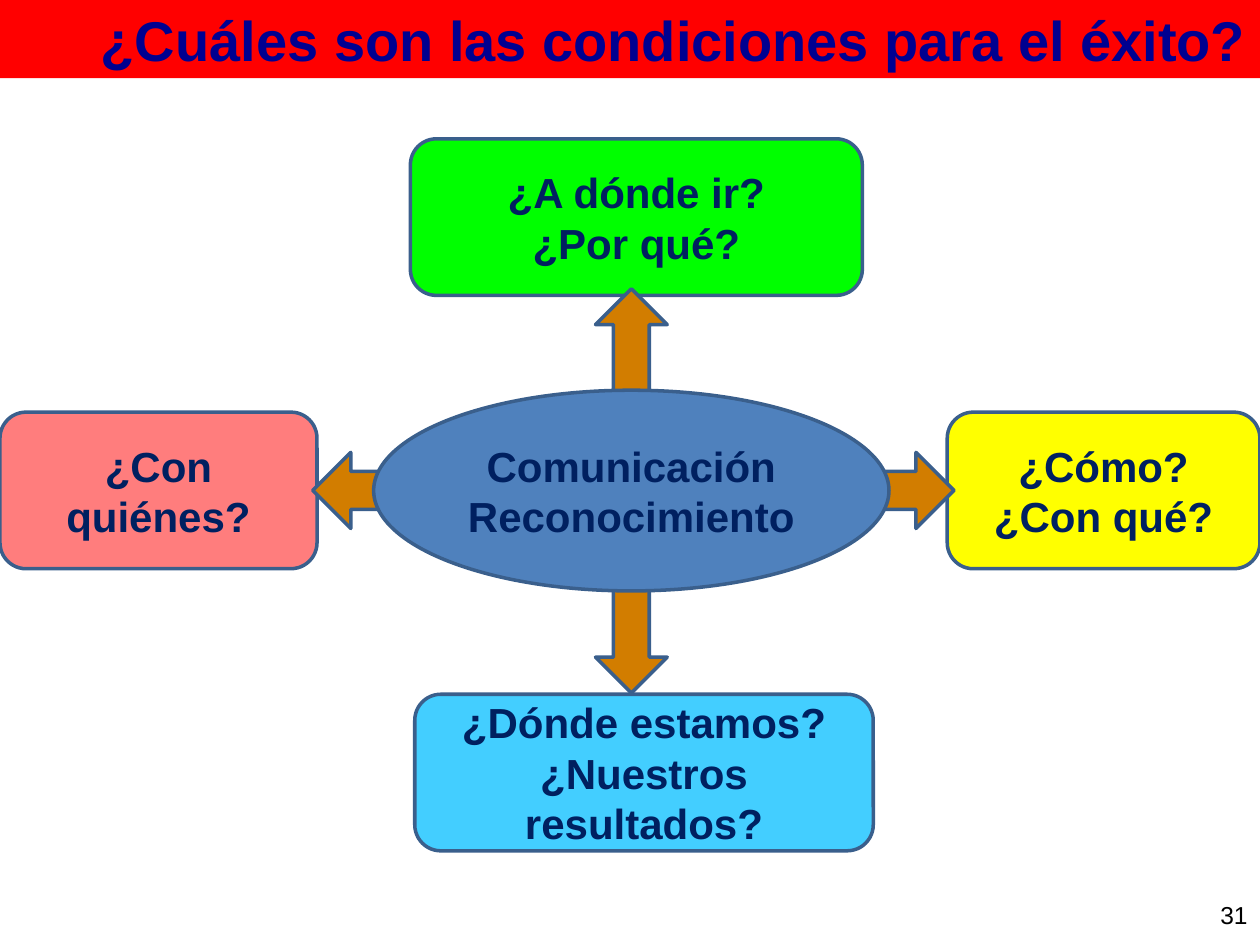
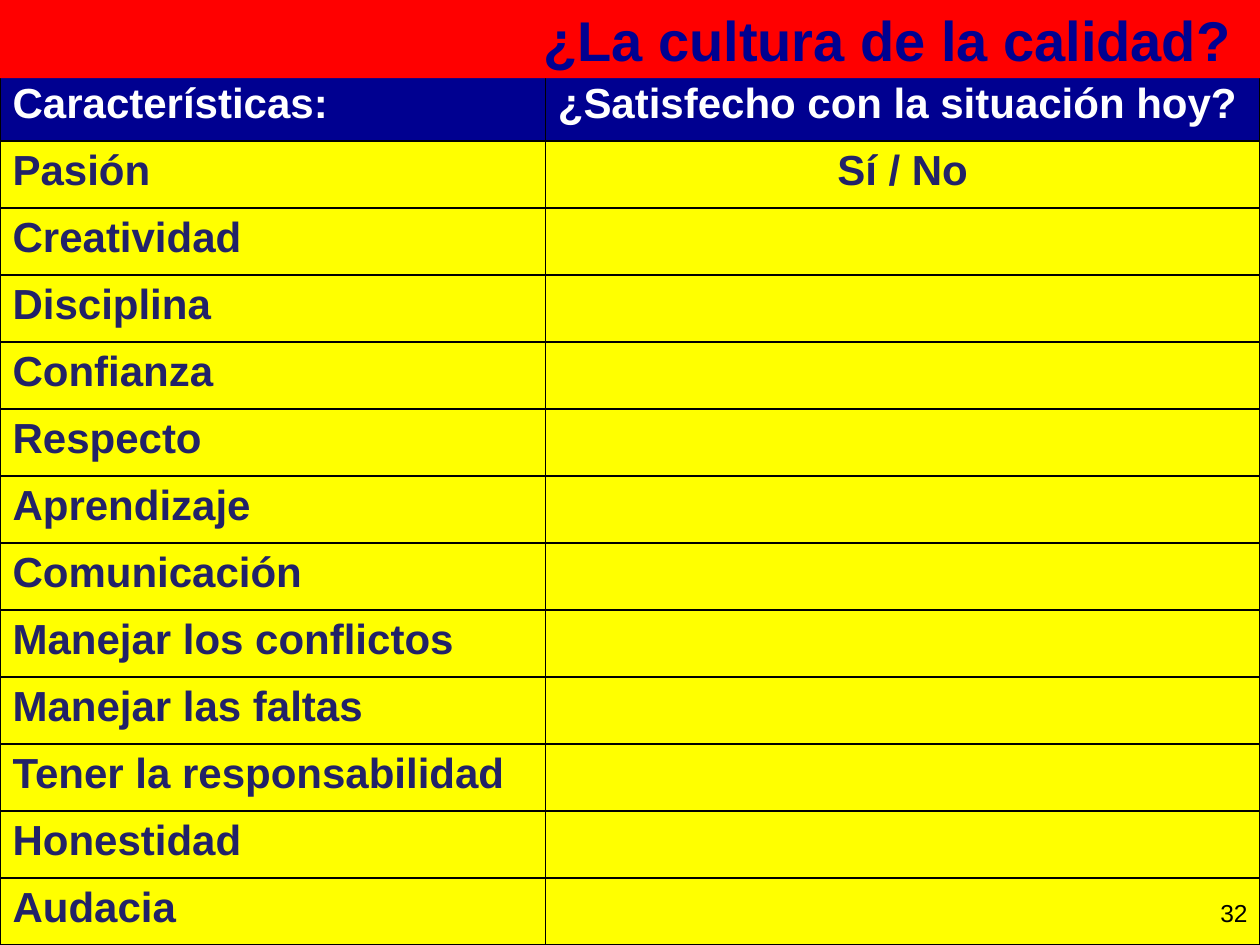
from pptx import Presentation
from pptx.dml.color import RGBColor
from pptx.enum import shapes, text
from pptx.oxml import parse_xml
from pptx.oxml.ns import nsdecls
from pptx.util import Pt

FONT = "Arial"
RED = RGBColor(0xFF, 0x00, 0x00)
DARK_BLUE = RGBColor(0x00, 0x00, 0x90)
NAVY = RGBColor(0x00, 0x20, 0x60)
INDIGO = RGBColor(0x22, 0x22, 0x68)
OUTLINE = RGBColor(0x3A, 0x5F, 0x8C)
BLUE = RGBColor(0x4F, 0x81, 0xBD)
ORANGE = RGBColor(0xD2, 0x7D, 0x00)
GREEN = RGBColor(0x00, 0xFF, 0x00)
SKY = RGBColor(0x43, 0xCE, 0xFF)
YELLOW = RGBColor(0xFF, 0xFF, 0x00)
PINK = RGBColor(0xFF, 0x7D, 0x7D)
BLACK = RGBColor(0x00, 0x00, 0x00)
WHITE = RGBColor(0xFF, 0xFF, 0xFF)

WIDTH, HEIGHT = 720, 540
BAND_HEIGHT = 44.64
BOX_HEIGHT = 89.5
SIDE_TOP = 235.5
LEFT, CENTER, RIGHT = text.PP_ALIGN.LEFT, text.PP_ALIGN.CENTER, text.PP_ALIGN.RIGHT
SHAPE = shapes.MSO_SHAPE

# wording, left, top, width, fill
QUESTIONS = [
    ("¿A dónde ir?\n¿Por qué?", 234.5, 79.3, 258.3, GREEN),
    ("¿Dónde estamos?\n¿Nuestros resultados?", 237, 396.7, 262, SKY),
    ("¿Cómo?\n¿Con qué?", 541.3, SIDE_TOP, 178.7, YELLOW),
    ("¿Con quiénes?", 0, SIDE_TOP, 181.2, PINK),
]
TRAITS = [
    "Pasión", "Creatividad", "Disciplina", "Confianza", "Respecto",
    "Aprendizaje", "Comunicación", "Manejar los conflictos",
    "Manejar las faltas", "Tener la responsabilidad", "Honestidad", "Audacia",
]
TABLE_TOP = 42.4
TRAIT_WIDTH = 311.6


def points(*lengths):
    return [Pt(length) for length in lengths]


def write(frame, wording, size, color, align, bold=True):
    frame.text = wording
    for paragraph in frame.paragraphs:
        paragraph.alignment = align
        for run in paragraph.runs:
            run.font.name = FONT
            run.font.size = Pt(size)
            run.font.bold = bold
            run.font.color.rgb = color


def fill_solid(target, color):
    target.fill.solid()
    target.fill.fore_color.rgb = color


def add_titled_slide(prs, wording):
    slide = prs.slides.add_slide(prs.slide_layouts[5])
    band = slide.shapes.title
    band.left, band.top, band.width, band.height = points(0, 0, WIDTH, BAND_HEIGHT)
    fill_solid(band, RED)
    frame = band.text_frame
    frame.auto_size = text.MSO_AUTO_SIZE.NONE
    frame.vertical_anchor = text.MSO_ANCHOR.MIDDLE
    write(frame, wording, 32, DARK_BLUE, RIGHT)
    return slide


def add_page_number(slide, number, top):
    label = slide.shapes.add_textbox(*points(552.2, top, WIDTH - 552.2, 37.4))
    label.text_frame.word_wrap = True
    label.text_frame.vertical_anchor = text.MSO_ANCHOR.MIDDLE
    write(label.text_frame, number, 14, BLACK, RIGHT, bold=False)


def add_outlined(slide, kind, place, color, wording=""):
    """Add a filled shape with the shared outline and centred wording."""
    shape = slide.shapes.add_shape(kind, *points(*place))
    shape.shadow.inherit = False
    fill_solid(shape, color)
    shape.line.color.rgb = OUTLINE
    shape.line.width = Pt(2)
    if wording:
        shape.text_frame.vertical_anchor = text.MSO_ANCHOR.MIDDLE
        write(shape.text_frame, wording, 24, NAVY, CENTER)


def add_borders(cell):
    properties = cell._tc.get_or_add_tcPr()
    for side in "LRTB":
        properties.append(parse_xml(
            f'<a:ln{side} {nsdecls("a")} w="12700"><a:solidFill>'
            f'<a:srgbClr val="{BLACK}"/></a:solidFill></a:ln{side}>'))


def format_cell(cell, wording, fill, color, align):
    add_borders(cell)
    fill_solid(cell, fill)
    if wording:
        write(cell.text_frame, wording, 24, color, align)
        paragraph = cell.text_frame.paragraphs[0]
        paragraph.space_before = paragraph.space_after = Pt(6)


def add_survey(slide):
    rows = [("Características:", "¿Satisfecho con la situación hoy?")]
    rows += [(trait, "") for trait in TRAITS]
    rows[1] = (TRAITS[0], "Sí / No")
    height = HEIGHT - TABLE_TOP
    survey = slide.shapes.add_table(
        len(rows), 2, *points(0, TABLE_TOP, WIDTH, height)).table
    survey.columns[0].width = Pt(TRAIT_WIDTH)
    survey.columns[1].width = Pt(WIDTH - TRAIT_WIDTH)
    for i, (trait, answer) in enumerate(rows):
        survey.rows[i].height = Pt(height / len(rows))
        fill, color = (YELLOW, INDIGO) if i else (DARK_BLUE, WHITE)
        format_cell(survey.cell(i, 0), trait, fill, color, LEFT)
        format_cell(survey.cell(i, 1), answer, fill, color, CENTER if i else LEFT)


def build_conditions(prs):
    slide = add_titled_slide(prs, "¿Cuáles son las condiciones para el éxito?")
    for wording, left, top, width, color in QUESTIONS:
        add_outlined(slide, SHAPE.ROUNDED_RECTANGLE,
                     (left, top, width, BOX_HEIGHT), color, wording)
    add_outlined(slide, SHAPE.LEFT_RIGHT_ARROW, (178.7, 258.5, 366.5, 43.5), ORANGE)
    add_outlined(slide, SHAPE.UP_DOWN_ARROW, (340.3, 165, 41, 231), ORANGE)
    add_outlined(slide, SHAPE.OVAL, (213.5, 223, 294.5, 114.7), BLUE,
                 "Comunicación\nReconocimiento")
    add_page_number(slide, "31", 504)


def build_culture(prs):
    slide = add_titled_slide(prs, "¿La cultura de la calidad? ")
    add_survey(slide)
    # The title band overlaps the top edge of the table
    slide.shapes._spTree.append(slide.shapes.title._element)
    add_page_number(slide, "32", 502.6)


def main():
    prs = Presentation()
    prs.slide_width, prs.slide_height = points(WIDTH, HEIGHT)
    build_conditions(prs)
    build_culture(prs)
    prs.save("out.pptx")


if __name__ == "__main__":
    main()
